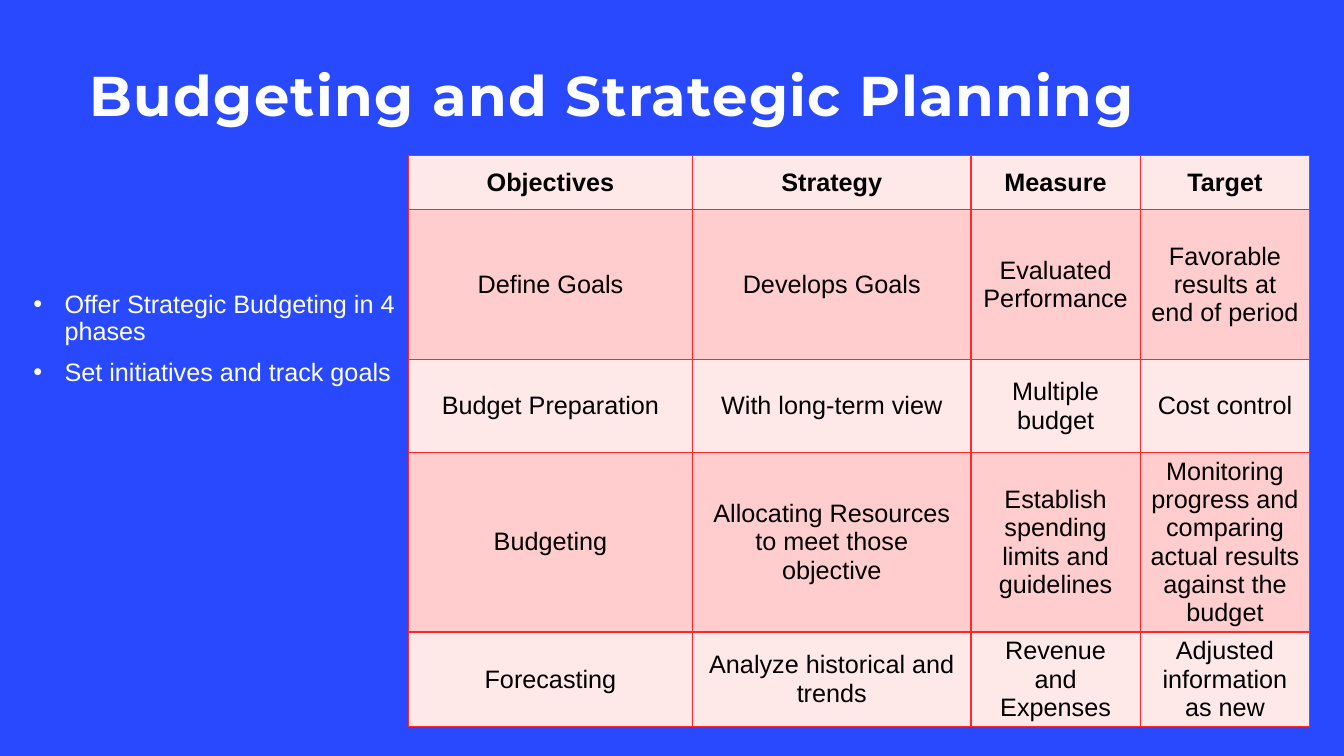
from pptx import Presentation
from pptx.dml.color import RGBColor
from pptx.enum.text import MSO_ANCHOR, MSO_AUTO_SIZE, PP_ALIGN
from pptx.oxml.ns import qn
from pptx.util import Inches, Pt
from lxml import etree

TOP, MIDDLE = MSO_ANCHOR.TOP, MSO_ANCHOR.MIDDLE
LEFT, CENTER = PP_ALIGN.LEFT, PP_ALIGN.CENTER
NO_FIT = MSO_AUTO_SIZE.NONE

COLORS = {
    "background": "2849FD",
    "light_text": "FFFFFF",
    "dark_text": "000000",
    "pale_row": "FFE8E8",
    "pink_row": "FFCDCD",
    "border": "FF2828",
}

TITLE = "Budgeting and Strategic Planning"
POINTS = ["Offer Strategic Budgeting in 4 phases", "Set initiatives and track goals"]
COLUMN_WIDTHS = [2.82, 2.76, 1.68, 1.68]
ROW_HEIGHTS = [0.54, 1.49, 0.92, 1.78, 0.94]
PLAN = [
    ["Objectives", "Strategy", "Measure", "Target"],
    ["Define Goals", "Develops Goals", "Evaluated Performance",
     "Favorable results at end of period"],
    ["Budget Preparation", "With long-term view", "Multiple budget", "Cost control"],
    ["Budgeting", "Allocating Resources to meet those objective",
     "Establish spending limits and guidelines",
     "Monitoring progress and comparing actual results against the budget"],
    ["Forecasting", "Analyze historical and trends", "Revenue and Expenses",
     "Adjusted information as new"],
]


def color(name):
    return RGBColor.from_string(COLORS[name])


def write(para, text, size=18, font="Arial", ink="light_text", bold=False,
          align=LEFT, line_spacing=None, space_before=0, tracking=None):
    para.alignment = align
    para.space_before = Pt(space_before)
    if line_spacing:
        para.line_spacing = line_spacing
    span = para.add_run()
    span.text = text
    span.font.size = Pt(size)
    span.font.name = font
    span.font.bold = bold
    span.font.color.rgb = color(ink)
    if tracking:
        span.font._element.set("spc", str(tracking * 100))


def place_frame(placeholder, box):
    left, top, width, height = box
    placeholder.left, placeholder.top = Inches(left), Inches(top)
    placeholder.width, placeholder.height = Inches(width), Inches(height)
    frame = placeholder.text_frame
    frame.margin_left = frame.margin_top = frame.margin_right = frame.margin_bottom = 0
    frame.vertical_anchor = TOP
    frame.word_wrap = True
    frame.auto_size = NO_FIT
    return frame


def add_bullet(para, indent):
    properties = para._p.get_or_add_pPr()
    properties.set("marL", str(Inches(indent)))
    properties.set("indent", str(-Inches(indent)))
    etree.SubElement(properties, qn("a:buFont")).set("typeface", "Arial")
    etree.SubElement(properties, qn("a:buChar")).set("char", "•")


def add_borders(cell, name, width):
    properties = cell._tc.get_or_add_tcPr()
    for side in ("lnL", "lnR", "lnT", "lnB"):
        line = etree.SubElement(properties, qn(f"a:{side}"), w=str(Pt(width)))
        fill = etree.SubElement(line, qn("a:solidFill"))
        etree.SubElement(fill, qn("a:srgbClr"), val=COLORS[name])


def build_title(page, box):
    frame = place_frame(page.shapes.title, box)
    write(frame.paragraphs[0], TITLE, size=40, font="Montserrat", bold=True,
          line_spacing=0.9, tracking=1)


def build_points(page, box):
    frame = place_frame(page.placeholders[1], box)
    for index, point in enumerate(POINTS):
        para = frame.add_paragraph() if index else frame.paragraphs[0]
        add_bullet(para, 0.31)
        write(para, point, line_spacing=0.9, space_before=10 if index else 0)


def build_plan_table(page, box):
    left, top, width, height = map(Inches, box)
    table = page.shapes.add_table(len(PLAN), len(PLAN[0]), left, top, width, height).table
    table.first_row = table.horz_banding = False
    for column, column_width in zip(table.columns, COLUMN_WIDTHS):
        column.width = Inches(column_width)
    for index, (row, row_height) in enumerate(zip(table.rows, ROW_HEIGHTS)):
        row.height = Inches(row_height)
        for cell, text in zip(row.cells, PLAN[index]):
            cell.vertical_anchor = MIDDLE
            add_borders(cell, "border", 1)
            cell.fill.solid()
            cell.fill.fore_color.rgb = color("pink_row" if index % 2 else "pale_row")
            write(cell.text_frame.paragraphs[0], text, ink="dark_text",
                  bold=index == 0, align=CENTER)


def main():
    deck = Presentation()
    deck.slide_width, deck.slide_height = Inches(13.33), Inches(7.5)
    page = deck.slides.add_slide(deck.slide_layouts[1])
    page.background.fill.solid()
    page.background.fill.fore_color.rgb = color("background")
    build_title(page, (0.89, 0.68, 11.56, 1.97))
    build_points(page, (0.33, 2.89, 4, 3.44))
    build_plan_table(page, (4.05, 1.54, sum(COLUMN_WIDTHS), sum(ROW_HEIGHTS)))
    deck.save("out.pptx")


if __name__ == "__main__":
    main()
